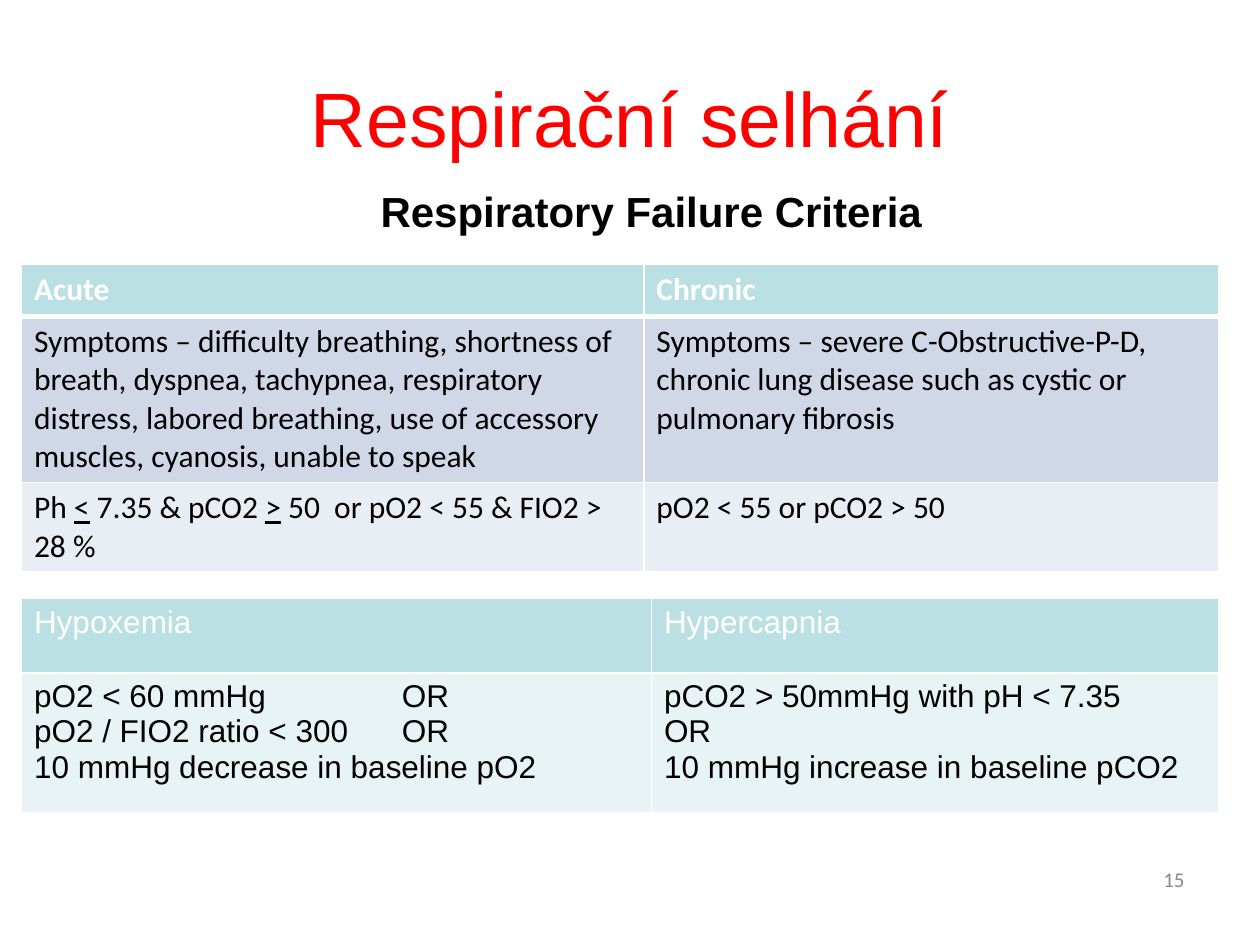
from pptx import Presentation
from pptx import util as u
from pptx.dml.color import RGBColor
from pptx.enum import text
from pptx.oxml.ns import qn
from lxml import etree

WHITE, BLACK, TEAL = "FFFFFF", "000000", "BBE0E3"


def color(code):
    return RGBColor.from_string(code)


def style(run, size, face, code, bold=False):
    font = run.font
    font.size, font.name, font.bold = u.Pt(size), face, bold
    font.color.rgb = color(code)


def place(shape, left, top, width, height):
    shape.left, shape.top = u.Inches(left), u.Inches(top)
    shape.width, shape.height = u.Inches(width), u.Inches(height)


def label(shape, words, *look):
    """Fill a shape with one formatted paragraph."""
    shape.text_frame.text = words
    para = shape.text_frame.paragraphs[0]
    style(para.runs[0], *look)
    return para


def border(cell, top, bottom):
    props = cell._tc.get_or_add_tcPr()
    for side, width in (("L", 1), ("R", 1), ("T", top), ("B", bottom)):
        line = etree.SubElement(props, qn(f"a:ln{side}"), w=str(u.Pt(width)))
        fill = etree.SubElement(line, qn("a:solidFill"))
        etree.SubElement(fill, qn("a:srgbClr"), val=WHITE)


def tab_stop(para, pos):
    stops = etree.SubElement(para._p.get_or_add_pPr(), qn("a:tabLst"))
    etree.SubElement(stops, qn("a:tab"), pos=str(u.Inches(pos)), algn="l")


def write(cell, words, *look):
    """One paragraph per line; parts between bars are underlined."""
    frame = cell.text_frame
    frame.text = words.replace("|", "")
    for para, line in zip(frame.paragraphs, words.split("\n")):
        if "\t" in line:
            tab_stop(para, 2.92)
        if "|" in line:
            para.clear()
            for i, part in enumerate(line.split("|")):
                run = para.add_run()
                run.text = part
                run.font.underline = i % 2 == 1
        for run in para.runs:
            style(run, *look)


def grid(slide, top, cols, rows, fills, face, bold, rule, cells):
    """Table whose first row is a header with a rule of the given width."""
    frame = slide.shapes.add_table(
        len(rows), len(cols), u.Inches(0.17), u.Inches(top),
        u.Inches(sum(cols)), u.Inches(sum(rows)))
    table = frame.table
    table.first_row = table.horz_banding = False
    for col, width in zip(table.columns, cols):
        col.width = u.Inches(width)
    for r, height in enumerate(rows):
        table.rows[r].height = u.Inches(height)
        for c, words in enumerate(cells[r]):
            cell = table.cell(r, c)
            head = r == 0
            border(cell, rule if r == 1 else 1, rule if head else 1)
            cell.fill.solid()
            cell.fill.fore_color.rgb = color(fills[r])
            write(cell, words, 18, face, WHITE if head else BLACK, bold and head)


def main():
    deck = Presentation()
    deck.slide_width, deck.slide_height = u.Inches(10), u.Inches(7.5)
    slide = deck.slides.add_slide(deck.slide_layouts[1])

    # Title and subtitle
    title, body = slide.placeholders
    place(title, 0.5, 0.3, 9, 1.25)
    para = label(title, "Respirační selhání", 44, "Arial", "FF0000")
    para.alignment = text.PP_ALIGN.CENTER
    place(body, 2.42, 1.42, 7.08, 0.7)
    para = label(body, "Respiratory Failure Criteria", 24, "Arial", BLACK, True)
    props = para._p.get_or_add_pPr()
    props.set("marL", str(u.Inches(0.5)))
    props.set("indent", "0")
    etree.SubElement(props, qn("a:buNone"))

    # Acute and chronic criteria
    grid(slide, 2.1, (4.94, 4.56), (0.41, 1.3, 0.7),
         (TEAL, "D0D8E8", "E9EDF4"), "Calibri", True, 3, [
             ("Acute", "Chronic"),
             ("Symptoms – difficulty breathing, shortness of breath, dyspnea, "
              "tachypnea, respiratory distress, labored breathing, use of "
              "accessory muscles, cyanosis, unable to speak",
              "Symptoms – severe C-Obstructive-P-D, chronic lung disease "
              "such as cystic or pulmonary fibrosis"),
             ("Ph |<| 7.35 & pCO2 |>| 50  or pO2 < 55 & FIO2 > 28 %",
              "pO2 < 55 or pCO2 > 50")])

    # Blood gas criteria
    grid(slide, 4.75, (5, 4.5), (0.59, 1.11),
         (TEAL, "E7F3F4"), "Arial", False, 1, [
             ("Hypoxemia", "Hypercapnia"),
             ("pO2 < 60 mmHg\tOR\npO2 / FIO2 ratio < 300\tOR\n"
              "10 mmHg decrease in baseline pO2",
              "pCO2 > 50mmHg with pH < 7.35\nOR\n"
              "10 mmHg increase in baseline pCO2")])

    # Slide number
    box = slide.shapes.add_textbox(0, 0, 0, 0)
    place(box, 7.17, 6.83, 2.33, 0.52)
    box.text_frame.word_wrap = True
    para = label(box, "15", 12, "Calibri", "898989")
    para.alignment = text.PP_ALIGN.RIGHT

    deck.save("out.pptx")


if __name__ == "__main__":
    main()
